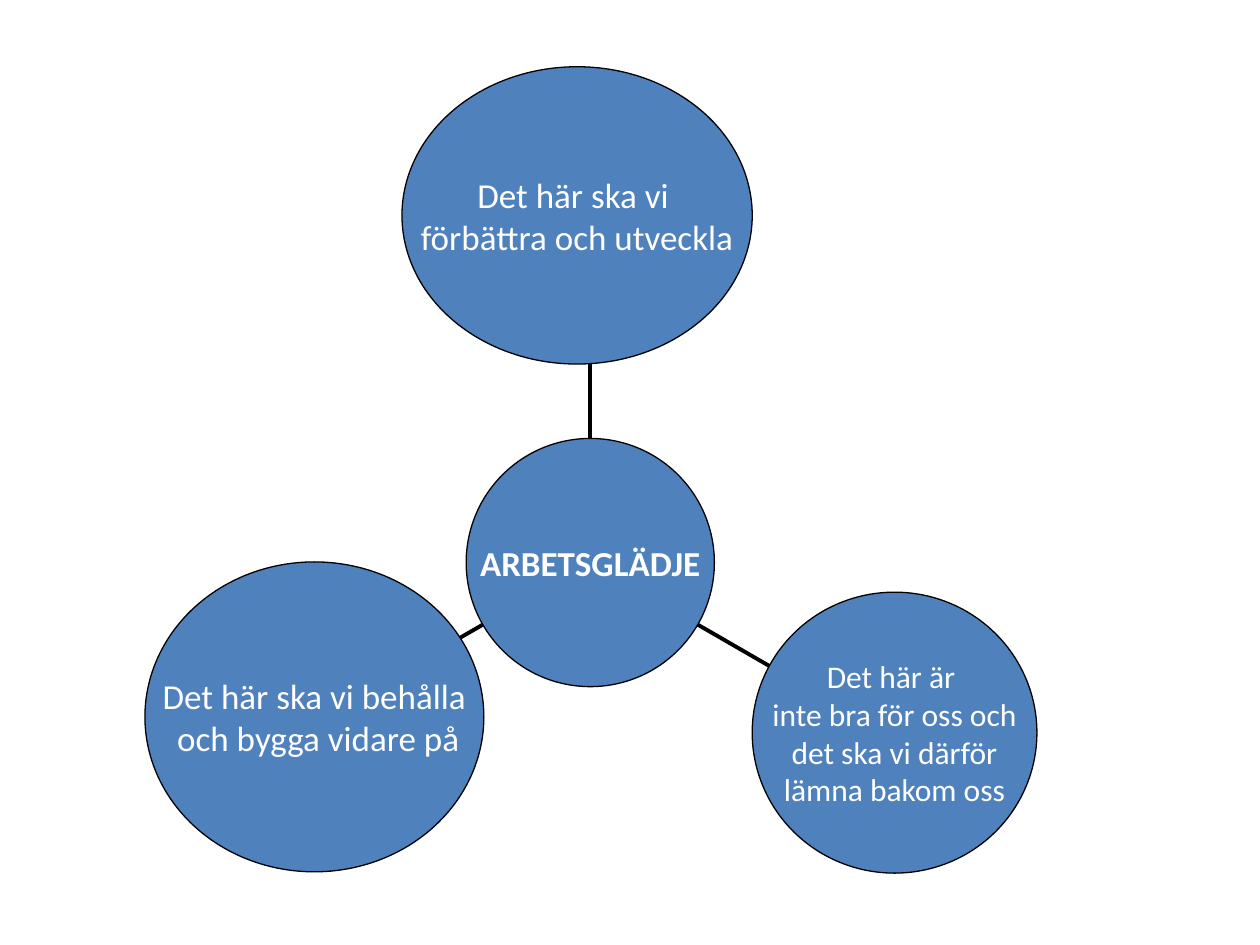
from math import cos, radians, sin

from lxml.etree import SubElement
from pptx import Presentation
from pptx.dml.color import RGBColor
from pptx.enum.shapes import MSO_CONNECTOR as Connector, MSO_SHAPE as Shape
from pptx.enum.text import MSO_ANCHOR as Anchor, PP_ALIGN as Align
from pptx.oxml.ns import qn
from pptx.util import Inches, Pt

COLORS = {"bubble": "4F81BD", "ink": "000000", "label": "FFFFFF"}
FONT = "Calibri"
COLUMNS, ROWS = 20, 15
WIDTH, HEIGHT = Inches(10), Inches(7.5)
CELL = WIDTH / COLUMNS

HUB_BOX = (7.4, 6.96, 3.94, 3.94)
HUB_LABEL = ["ARBETSGLÄDJE"]
BRANCHES = [
    (-90, (6.38, 1.06, 5.56, 4.72), 20,
     ["Det här ska vi ", "förbättra och utveckla"]),
    (30, (11.94, 9.4, 4.52, 4.46), 18,
     ["Det här är ", "inte bra för oss och", " det ska vi därför ", "lämna bakom oss"]),
    (150, (2.3, 8.92, 5.38, 4.92), 20,
     ["Det här ska vi behålla", " och bygga vidare på"]),
]


def cells(*counts):
    """Turn counts of grid cells into slide lengths."""
    return [round(count * CELL) for count in counts]


def color(name):
    """Look up a colour of the palette."""
    return RGBColor.from_string(COLORS[name])


def write(frame, lines, size=20, bold=False, ink="label"):
    """Write centred lines into a text frame."""
    frame.word_wrap = False
    frame.vertical_anchor = Anchor.MIDDLE
    frame.margin_left = frame.margin_right = Inches(0.13)
    frame.margin_top = frame.margin_bottom = Inches(0.07)
    for index, line in enumerate(lines):
        paragraph = frame.paragraphs[0] if index == 0 else frame.add_paragraph()
        paragraph.alignment = Align.CENTER
        run = paragraph.add_run()
        run.text = line
        run.font.name, run.font.size, run.font.bold = FONT, Pt(size), bold
        run.font.color.rgb = color(ink)


def add_bubble(slide, box, lines, **text_format):
    """Fill the box with a labelled ellipse."""
    bubble = slide.shapes.add_shape(Shape.OVAL, *cells(*box))
    bubble.shadow.inherit = False
    bubble.fill.solid()
    bubble.fill.fore_color.rgb = color("bubble")
    bubble.line.color.rgb = color("ink")
    bubble.line.width = Pt(0.75)
    write(bubble.text_frame, lines, **text_format)


def add_spoke(slide, hub, angle):
    """Draw a spoke one radius long outward from the rim of the hub."""
    left, top, width, height = hub
    radius = width / 2
    center_x, center_y = left + radius, top + height / 2
    ends = []
    for reach in (radius, 2 * radius):
        ends += [center_x + reach * cos(radians(angle)),
                 center_y + reach * sin(radians(angle))]
    spoke = slide.shapes.add_connector(Connector.STRAIGHT, *cells(*ends))
    spoke.line.color.rgb = color("ink")
    spoke.line.width = Pt(2.25)
    SubElement(spoke._element.spPr, qn("a:effectLst"))


def add_radial_diagram(slide, hub):
    """Place the branches around the hub box, then the hub on top."""
    for angle, box, size, lines in BRANCHES:
        add_spoke(slide, hub, angle)
        add_bubble(slide, box, lines, size=size)
    add_bubble(slide, hub, HUB_LABEL, bold=True)


def main():
    """Build and save the slide."""
    deck = Presentation()
    deck.slide_width, deck.slide_height = WIDTH, HEIGHT
    slide = deck.slides.add_slide(deck.slide_layouts[6])
    add_radial_diagram(slide, HUB_BOX)
    deck.save("out.pptx")


if __name__ == "__main__":
    main()
